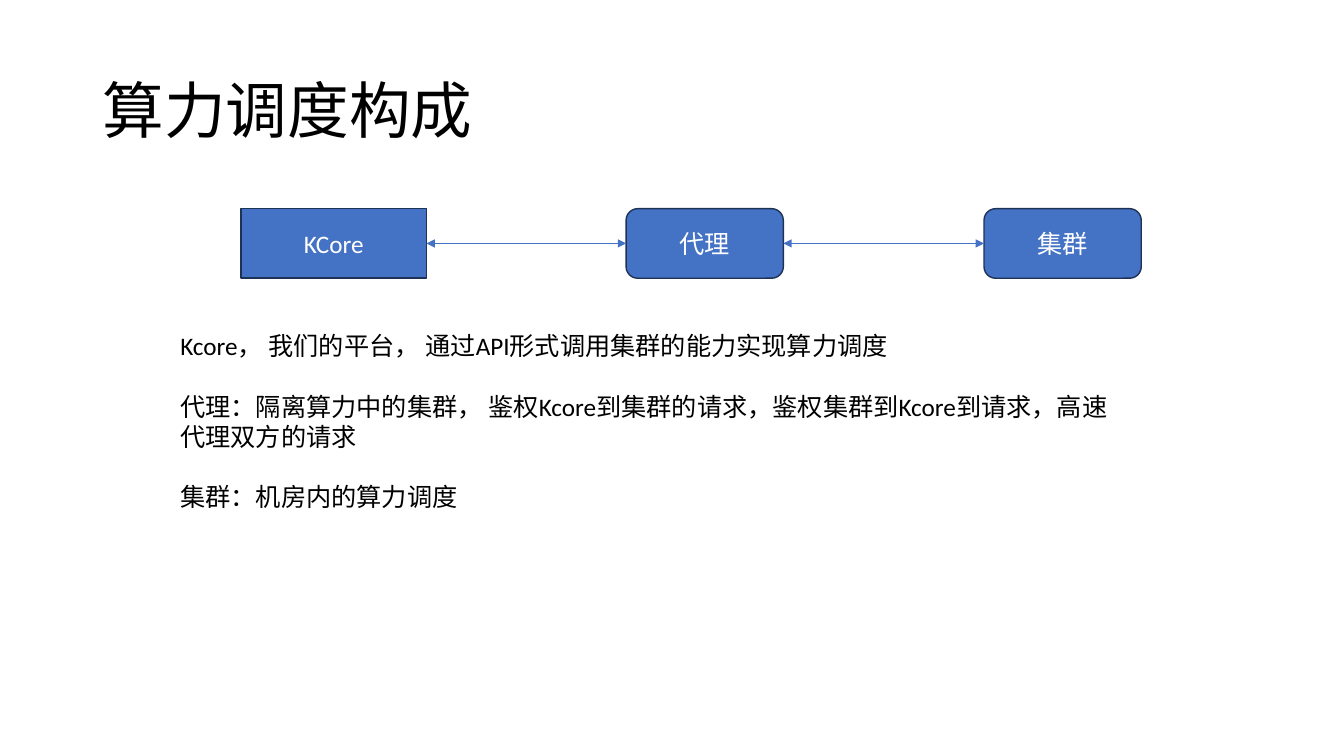
from lxml import etree
from pptx import Presentation
from pptx.dml.color import RGBColor
from pptx.enum.shapes import MSO_CONNECTOR, MSO_SHAPE
from pptx.enum.text import MSO_ANCHOR, PP_ALIGN
from pptx.oxml.ns import qn
from pptx.util import Inches, Pt

RECT, ROUNDED = MSO_SHAPE.RECTANGLE, MSO_SHAPE.ROUNDED_RECTANGLE
STRAIGHT = MSO_CONNECTOR.STRAIGHT
TOP, MIDDLE = MSO_ANCHOR.TOP, MSO_ANCHOR.MIDDLE
LEFT, CENTER = PP_ALIGN.LEFT, PP_ALIGN.CENTER
LEFT_SIDE, RIGHT_SIDE = 1, 3

FONT = "Calibri"
COLORS = {"text": "000000", "box": "4472C4", "border": "1E3256", "label": "FFFFFF"}

TITLE = "算力调度构成"
# label, shape, left, width
COMPONENTS = [
    ("KCore", RECT, 2.39, 1.84),
    ("代理", ROUNDED, 6.21, 1.56),
    ("集群", ROUNDED, 9.76, 1.56),
]
DESCRIPTIONS = [
    "Kcore， 我们的平台， 通过API形式调用集群的能力实现算力调度",
    "代理：隔离算力中的集群， 鉴权Kcore到集群的请求，鉴权集群到Kcore到请求，高速代理双方的请求",
    "集群：机房内的算力调度",
]
ROW_TOP, ROW_HEIGHT = 2.07, 0.69
PARAGRAPH_GAP = 21.6


def rgb(name):
    return RGBColor.from_string(COLORS[name])


def write(shape, lines, size, color, align=LEFT, anchor=TOP, gap=0, spacing=1.0):
    frame = shape.text_frame
    frame.word_wrap = True
    frame.vertical_anchor = anchor
    frame.text = "\n".join(lines)
    for index, paragraph in enumerate(frame.paragraphs):
        paragraph.alignment = align
        paragraph.line_spacing = spacing
        paragraph.space_before = Pt(gap if index else 0)
        paragraph.font.name = FONT
        paragraph.font.size = Pt(size)
        paragraph.font.color.rgb = rgb(color)


def add_text(slide, box, lines, size, **layout):
    write(slide.shapes.add_textbox(*map(Inches, box)), lines, size, "text", **layout)


def add_component(slide, label, kind, left, width):
    component = slide.shapes.add_shape(
        kind, Inches(left), Inches(ROW_TOP), Inches(width), Inches(ROW_HEIGHT))
    component.shadow.inherit = False
    component.fill.solid()
    component.fill.fore_color.rgb = rgb("box")
    component.line.color.rgb = rgb("border")
    component.line.width = Pt(1)
    write(component, [label], 18, "label", align=CENTER, anchor=MIDDLE)
    return component


def link(slide, source, target):
    """Join two neighbours with a double-headed arrow."""
    arrow = slide.shapes.add_connector(STRAIGHT, 0, 0, 0, 0)
    arrow.begin_connect(source, RIGHT_SIDE)
    arrow.end_connect(target, LEFT_SIDE)
    arrow.line.color.rgb = rgb("box")
    arrow.line.width = Pt(0.5)
    outline = arrow.line._get_or_add_ln()
    for end in ("a:headEnd", "a:tailEnd"):
        etree.SubElement(outline, qn(end), type="triangle")
    etree.SubElement(arrow._element.spPr, qn("a:effectLst"))


def main():
    deck = Presentation()
    deck.slide_width, deck.slide_height = Inches(13.33), Inches(7.5)
    slide = deck.slides.add_slide(deck.slide_layouts[6])

    add_text(slide, (0.92, 0.4, 11.5, 1.45), [TITLE], 44, anchor=MIDDLE, spacing=0.9)
    components = [add_component(slide, *component) for component in COMPONENTS]
    for source, target in zip(components, components[1:]):
        link(slide, source, target)
    add_text(slide, (1.69, 3.23, 9.63, 1.92), DESCRIPTIONS, 18, gap=PARAGRAPH_GAP)

    deck.save("out.pptx")


if __name__ == "__main__":
    main()
